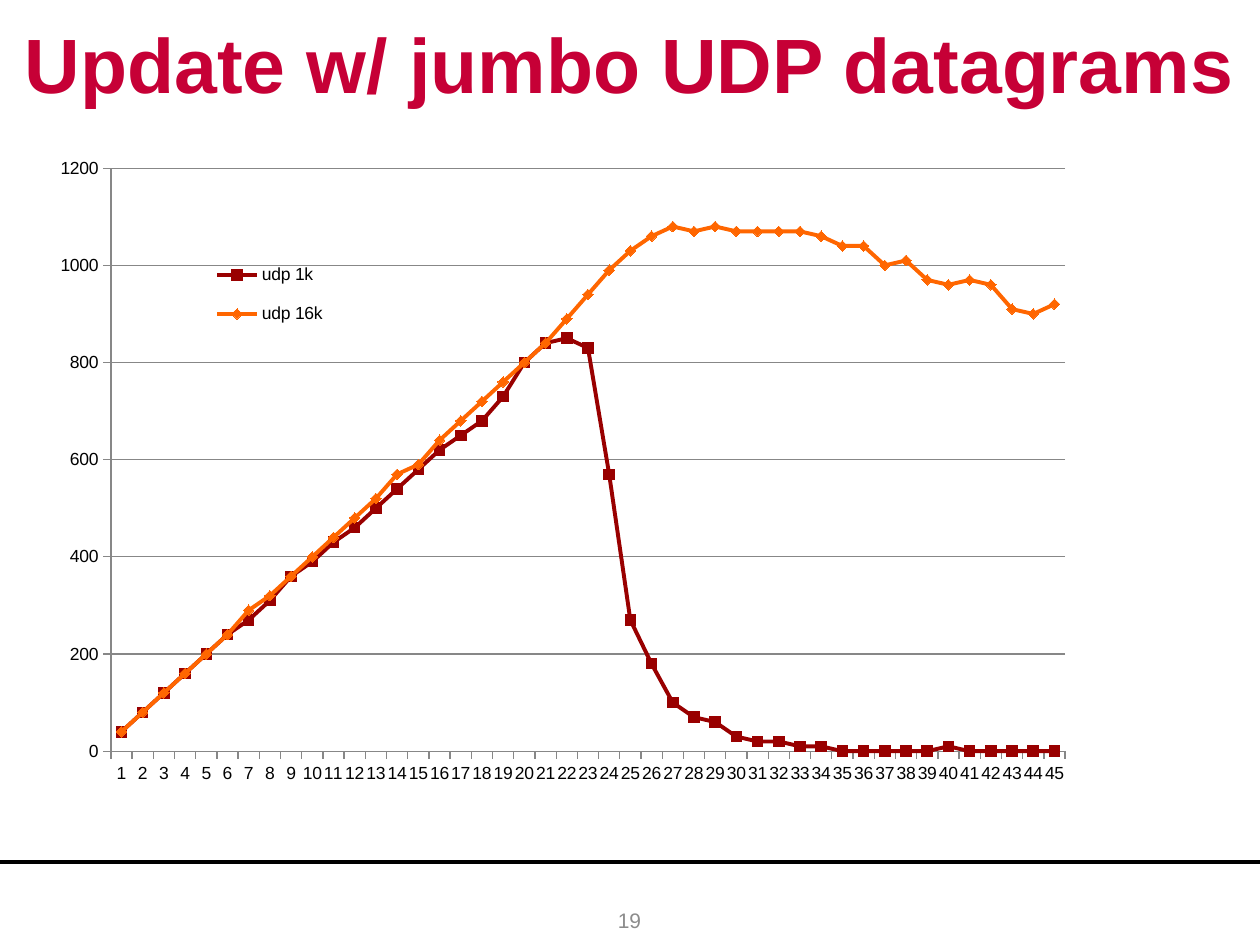
"""Build a slide with a line chart of UDP throughput for two datagram sizes."""
from dataclasses import dataclass

from lxml import etree
from pptx import Presentation
from pptx import util as u
from pptx.chart import data as chart_data
from pptx.dml.color import RGBColor
from pptx.enum import chart as charts, shapes, text
from pptx.oxml import ns


@dataclass(frozen=True)
class Theme:
    font: str = "Arial"
    title: str = "C60036"
    ink: str = "000000"
    muted: str = "8C8C8C"
    grid: str = "878787"
    small: str = "990000"
    jumbo: str = "FF6600"
    title_size: int = 44
    number_size: int = 12
    chart_size: int = 10


def add_label(page, bounds, words, size, colour, bold=False):
    box = page.shapes.add_textbox(*(u.Cm(value) for value in bounds))
    frame = box.text_frame
    frame.text = words
    frame.word_wrap = True
    frame.vertical_anchor = text.MSO_ANCHOR.MIDDLE
    para = frame.paragraphs[0]
    para.alignment = text.PP_ALIGN.CENTER
    span = para.runs[0]
    span.font.name = theme.font
    span.font.size = u.Pt(size)
    span.font.bold = bold
    span.font.color.rgb = RGBColor.from_string(colour)


def place(parent, index, inner, **fractions):
    for old in parent.findall(ns.qn("c:layout")):
        parent.remove(old)
    layout = etree.Element(ns.qn("c:layout"))
    manual = etree.SubElement(layout, ns.qn("c:manualLayout"))
    if inner:
        etree.SubElement(manual, ns.qn("c:layoutTarget")).set("val", "inner")
    for side in "xy":
        etree.SubElement(manual, ns.qn(f"c:{side}Mode")).set("val", "edge")
    for name, value in fractions.items():
        etree.SubElement(manual, ns.qn(f"c:{name}")).set("val", str(value))
    parent.insert(index, layout)


theme = Theme()
deck = Presentation()
deck.slide_width, deck.slide_height = u.Cm(25.4), u.Cm(19.05)
page = deck.slides.add_slide(deck.slide_layouts[6])

rule = page.shapes.add_connector(
    shapes.MSO_CONNECTOR.STRAIGHT, 0, u.Cm(17.37), deck.slide_width, u.Cm(17.37))
rule.line.color.rgb = RGBColor.from_string(theme.ink)
rule.line.width = u.Pt(2.25)
etree.SubElement(rule._element.spPr, ns.qn("a:effectLst"))

add_label(page, (0, 0, 25.4, 2.54), "Update w/ jumbo UDP datagrams",
          theme.title_size, theme.title, bold=True)
add_label(page, (9.73, 18.03, 5.92, 1.02), "19", theme.number_size, theme.muted)

udp_1k = [40, 80, 120, 160, 200, 240, 270, 310, 360, 390, 430, 460, 500, 540, 580,
          620, 650, 680, 730, 800, 840, 850, 830, 570, 270, 180, 100, 70, 60, 30,
          20, 20, 10, 10, 0, 0, 0, 0, 0, 10, 0, 0, 0, 0, 0]
udp_16k = [40, 80, 120, 160, 200, 240, 290, 320, 360, 400, 440, 480, 520, 570, 590,
           640, 680, 720, 760, 800, 840, 890, 940, 990, 1030, 1060, 1080, 1070, 1080, 1070,
           1070, 1070, 1070, 1060, 1040, 1040, 1000, 1010, 970, 960, 970, 960, 910, 900, 920]
source = chart_data.CategoryChartData()
source.categories = [str(number) for number in range(1, len(udp_1k) + 1)]
source.add_series("udp 1k", udp_1k)
source.add_series("udp 16k", udp_16k)

chart = page.shapes.add_chart(
    charts.XL_CHART_TYPE.LINE_MARKERS,
    u.Cm(0.81), u.Cm(3), u.Cm(23.75), u.Cm(13.06), source).chart
chart.has_title = False
chart.font.name = theme.font
chart.font.size = u.Pt(theme.chart_size)
chart.font.color.rgb = RGBColor.from_string(theme.ink)
chart.plots[0].vary_by_categories = False

styles = [(theme.small, charts.XL_MARKER_STYLE.SQUARE),
          (theme.jumbo, charts.XL_MARKER_STYLE.DIAMOND)]
for series, (colour, marker) in zip(chart.plots[0].series, styles):
    series.smooth = False
    series.format.line.width = u.Pt(2.25)
    series.format.line.color.rgb = RGBColor.from_string(colour)
    series.marker.style = marker
    series.marker.size = 6
    series.marker.format.fill.solid()
    series.marker.format.fill.fore_color.rgb = RGBColor.from_string(colour)
    series.marker.format.line.color.rgb = RGBColor.from_string(colour)

chart.value_axis.minimum_scale = 0
chart.value_axis.maximum_scale = 1200
chart.value_axis.major_unit = 200
chart.value_axis.has_major_gridlines = True
for axis in (chart.category_axis, chart.value_axis):
    axis.major_tick_mark = charts.XL_TICK_MARK.OUTSIDE
    axis.minor_tick_mark = charts.XL_TICK_MARK.NONE
    axis.tick_labels.font.size = u.Pt(theme.chart_size)
    axis._element.find(ns.qn("c:txPr")).find(ns.qn("a:bodyPr")).set("rot", "0")
for part in (chart.category_axis, chart.value_axis, chart.value_axis.major_gridlines):
    part.format.line.color.rgb = RGBColor.from_string(theme.grid)
    part.format.line.width = u.Pt(0.75)

chart.has_legend = True
chart.legend.position = charts.XL_LEGEND_POSITION.RIGHT
chart.legend.include_in_layout = False
place(chart.legend._element, 1, False, x=0.13, y=0.15, w=0.13, h=0.15)
place(chart._chartSpace.chart.plotArea, 0, True, x=0.06, y=0.03, w=0.81, h=0.9)

deck.save("out.pptx")
